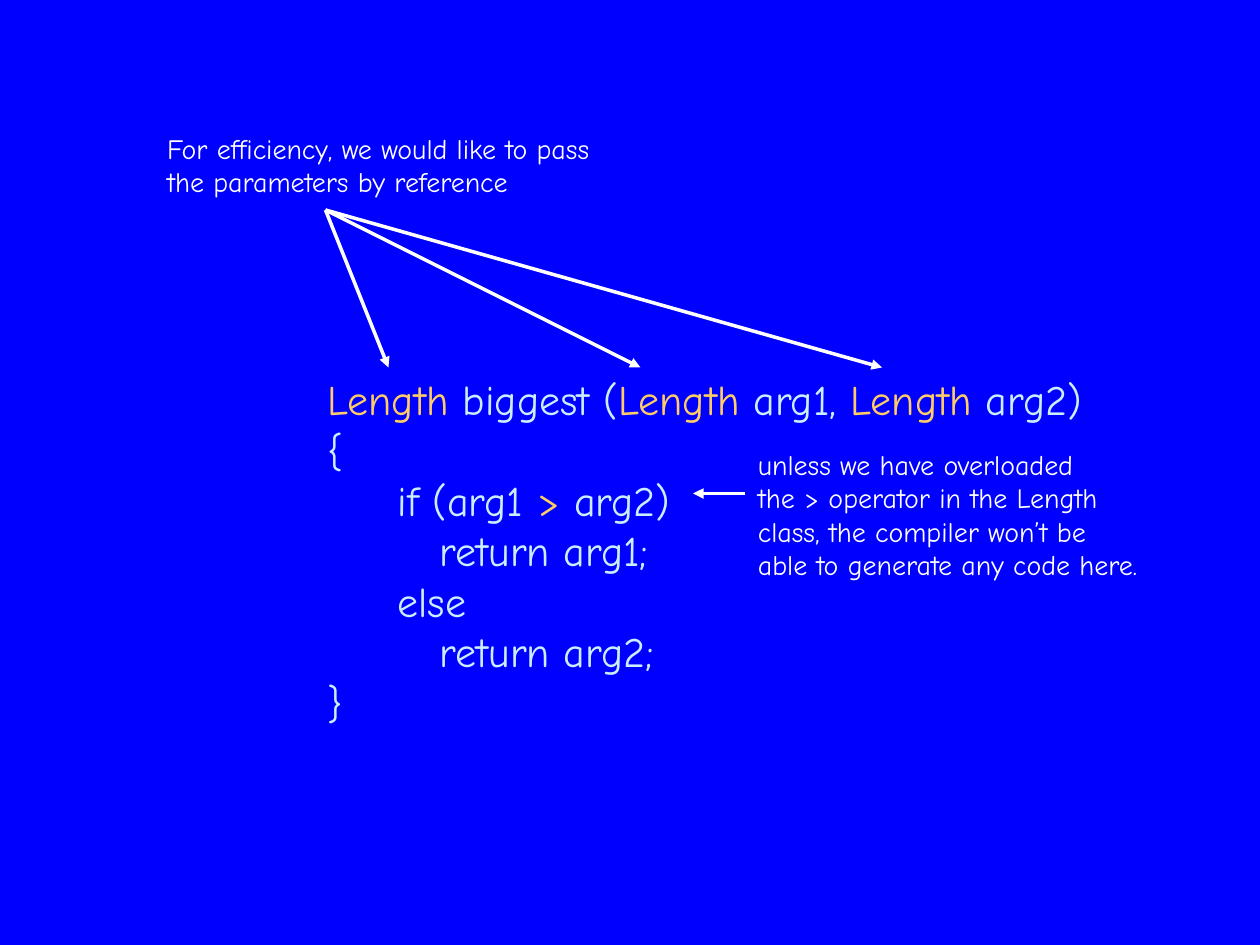
"""Build a slide of annotated code on passing and comparing Length objects."""
import pptx
import pptx.dml.color
import pptx.enum.shapes
import pptx.enum.text
import pptx.oxml.ns
import pptx.util
from lxml import etree

THEME = {
    "background": "0000FF",
    "code": "CCECFF",
    "accent": "FFCC66",
    "note": "FFFFFF",
    "font": "Comic Neue",
    "code_size": 24,
    "note_size": 16,
    "line_width": 2,
}
COLUMNS, ROWS = 120, 90
WIDTH, HEIGHT = pptx.util.Inches(10), pptx.util.Inches(7.5)

CODE = [
    [("Length", "accent"), (" biggest (", "code"), ("Length", "accent"),
     (" arg1, ", "code"), ("Length", "accent"), (" arg2)", "code")],
    [("{", "code")],
    [("     if (arg1 ", "code"), (">", "accent"), (" arg2)", "code")],
    [("        return arg1;", "code")],
    [("     else", "code")],
    [("        return arg2;", "code")],
    [("}", "code")],
]
EFFICIENCY = [
    [("For efficiency, we would like to pass", "note")],
    [("the parameters by reference", "note")],
]
OVERLOADING = [
    [("unless we have overloaded", "note")],
    [("the > operator in the Length", "note")],
    [("class, the compiler won’t be", "note")],
    [("able to generate any code here.", "note")],
]
BOXES = [
    (CODE, "code_size", (30, 35, 81.7, 35.1)),
    (EFFICIENCY, "note_size", (14.75, 11.9, 48.2, 7.7)),
    (OVERLOADING, "note_size", (71, 42, 41.6, 14)),
]
REFERENCE_START = (31, 20)
ARROWS = [(REFERENCE_START, (column, 35)) for column in (37, 61, 84)]
ARROWS.append(((71, 47), (66, 47)))


def across(column):
    return round(WIDTH * column / COLUMNS)


def down(row):
    return round(HEIGHT * row / ROWS)


def color(name):
    return pptx.dml.color.RGBColor.from_string(THEME[name])


def apply(target, formats):
    for name, value in formats.items():
        setattr(target, name, value)


def add_text(slide, lines, size, place):
    left, top, width, height = place
    box = slide.shapes.add_textbox(across(left), down(top), across(width), down(height))
    frame = box.text_frame
    apply(frame, {"word_wrap": False,
                  "auto_size": pptx.enum.text.MSO_AUTO_SIZE.SHAPE_TO_FIT_TEXT})
    for index, line in enumerate(lines):
        para = frame.add_paragraph() if index else frame.paragraphs[0]
        for text, tone in line:
            span = para.add_run()
            span.text = text
            apply(span.font, {"name": THEME["font"], "size": pptx.util.Pt(THEME[size])})
            span.font.color.rgb = color(tone)


def add_arrow(slide, start, end):
    arrow = slide.shapes.add_connector(
        pptx.enum.shapes.MSO_CONNECTOR.STRAIGHT,
        across(start[0]), down(start[1]), across(end[0]), down(end[1]))
    arrow.line.width = pptx.util.Pt(THEME["line_width"])
    arrow.line.color.rgb = color("note")
    qualify = pptx.oxml.ns.qn
    etree.SubElement(arrow.line._get_or_add_ln(), qualify("a:tailEnd"), type="triangle")
    etree.SubElement(arrow._element.spPr, qualify("a:effectLst"))


def main():
    deck = pptx.Presentation()
    apply(deck, {"slide_width": WIDTH, "slide_height": HEIGHT})
    page = deck.slides.add_slide(deck.slide_layouts[6])
    page.background.fill.solid()
    page.background.fill.fore_color.rgb = color("background")
    for lines, size, place in BOXES:
        add_text(page, lines, size, place)
    for start, end in ARROWS:
        add_arrow(page, start, end)
    deck.save("out.pptx")


if __name__ == "__main__":
    main()
